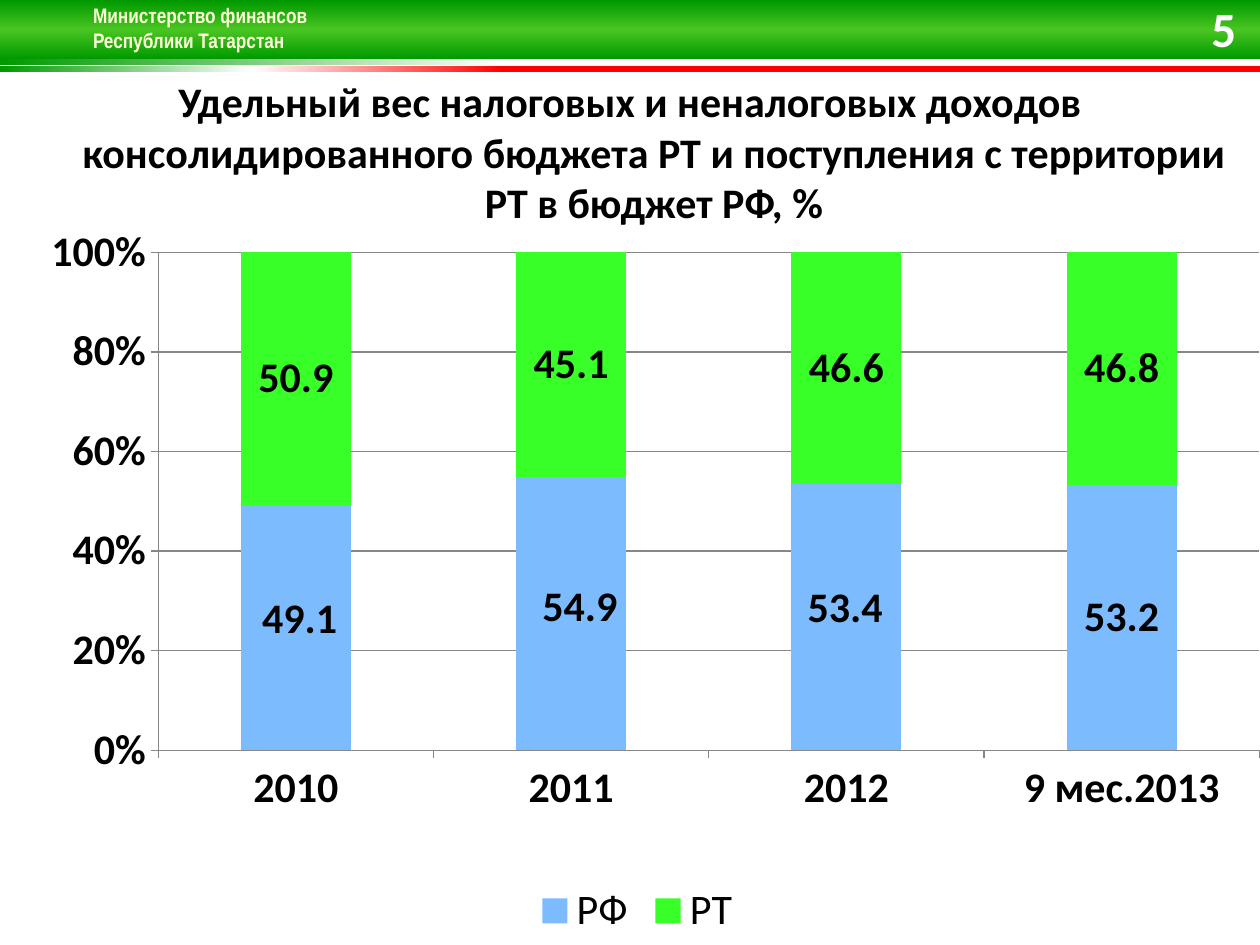
import pptx
import pptx.chart.data
import pptx.dml.color
import pptx.enum.chart
import pptx.enum.shapes
import pptx.enum.text
import pptx.oxml
import pptx.oxml.ns
import pptx.util
from pptx.util import Inches

COLORS = {
    "white": "FFFFFF", "cream": "FFFFD9", "black": "000000",
    "green": "009900", "light_green": "49C522", "red": "FF0000",
    "federal": "7DBBFF", "republic": "39FF29", "axis": "878787",
}
FORMATS = {
    "ministry": {"name": "Arial Narrow", "size": pptx.util.Pt(12), "bold": True},
    "heading": {"name": "Calibri", "size": pptx.util.Pt(24), "bold": True},
    "number": {"name": "Calibri", "size": pptx.util.Pt(28), "bold": True},
    "legend": {"name": "Calibri", "size": pptx.util.Pt(24), "bold": False},
}
NS = pptx.oxml.ns.nsdecls("a", "c")


def rgb(color):
    return pptx.dml.color.RGBColor.from_string(COLORS[color])


def style_font(font, style, color):
    for attribute, value in FORMATS[style].items():
        setattr(font, attribute, value)
    font.color.rgb = rgb(color)


deck = pptx.Presentation()
deck.slide_width, deck.slide_height = Inches(10), Inches(7.5)
slide = deck.slides.add_slide(deck.slide_layouts[5])

# Header bands: top, height, gradient angle, stops in percent
bands = [
    (0.47, 0.05, 180, [(0, "white"), (60, "white"), (100, "green")]),
    (0.52, 0.05, 180, [(60, "red"), (80, "white"), (100, "green")]),
    (0, 0.47, 90, [(0, "green"), (50, "light_green"), (100, "green")]),
]
for top, height, angle, stops in bands:
    band = slide.shapes.add_shape(pptx.enum.shapes.MSO_SHAPE.RECTANGLE,
                                  0, Inches(top), Inches(10), Inches(height))
    band.shadow.inherit = False
    band.line.fill.background()
    stop_xml = "".join(
        f'<a:gs pos="{position * 1000}"><a:srgbClr val="{COLORS[color]}"/></a:gs>'
        for position, color in stops)
    band.fill.background()
    no_fill = band.element.spPr.find(pptx.oxml.ns.qn("a:noFill"))
    no_fill.getparent().replace(no_fill, pptx.oxml.parse_xml(
        f'<a:gradFill {NS} rotWithShape="1"><a:gsLst>{stop_xml}</a:gsLst>'
        f'<a:lin ang="{angle * 60000}" scaled="0"/></a:gradFill>'))

# Ministry name with a soft text shadow
ministry = slide.shapes.add_textbox(Inches(0.64), Inches(-0.03), Inches(1.92), Inches(0.71))
ministry.text_frame.word_wrap = True
ministry.text_frame.text = "Министерство финансов\vРеспублики Татарстан"
for run in ministry.text_frame.paragraphs[0].runs:
    style_font(run.font, "ministry", "cream")
    run.font.fill._xPr.find(pptx.oxml.ns.qn("a:solidFill")).addnext(pptx.oxml.parse_xml(
        f'<a:effectLst {NS}><a:outerShdw blurRad="38100" dist="38100" dir="2700000">'
        '<a:srgbClr val="000000"><a:alpha val="43000"/></a:srgbClr>'
        '</a:outerShdw></a:effectLst>'))

# Heading
heading = slide.shapes.title
heading.left, heading.top = 0, Inches(0.55)
heading.width, heading.height = Inches(10), Inches(0.47)
heading.text_frame.text = (
    "Удельный вес налоговых и неналоговых доходов консолидированного бюджета РТ "
    "и поступления с территории РТ в бюджет РФ, %")
heading.text_frame.word_wrap = True
heading.text_frame.auto_size = pptx.enum.text.MSO_AUTO_SIZE.NONE
heading.text_frame.vertical_anchor = pptx.enum.text.MSO_ANCHOR.TOP
heading_line = heading.text_frame.paragraphs[0]
heading_line.alignment = pptx.enum.text.PP_ALIGN.CENTER
heading_line._p.get_or_add_pPr().set("marL", str(Inches(0.38)))
heading_line._p.get_or_add_pPr().set("indent", str(Inches(-0.38)))
style_font(heading_line.runs[0].font, "heading", "black")

# Revenue shares chart
shares = pptx.chart.data.CategoryChartData(number_format="0.0")
shares.categories = ["2010", "2011", "2012", "9 мес.2013"]
shares.add_series("РФ", [49.1, 54.9, 53.4, 53.2])
shares.add_series("РТ", [50.9, 45.1, 46.6, 46.8])
chart = slide.shapes.add_chart(
    pptx.enum.chart.XL_CHART_TYPE.COLUMN_STACKED_100,
    Inches(0.12), Inches(1.78), Inches(9.88), Inches(5.72), shares).chart
chart.has_title = False
chart.font.name = "Calibri"
chart.font.size = pptx.util.Pt(18)
chart.font.color.rgb = rgb("black")

plot = chart.plots[0]
plot.gap_width, plot.overlap, plot.vary_by_categories = 150, 100, False
plot_area = chart._chartSpace.chart.plotArea
for old_layout in plot_area.findall(pptx.oxml.ns.qn("c:layout")):
    plot_area.remove(old_layout)
plot_area.insert(0, pptx.oxml.parse_xml(
    f'<c:layout {NS}><c:manualLayout><c:layoutTarget val="inner"/>'
    '<c:xMode val="edge"/><c:yMode val="edge"/><c:x val="0.115"/><c:y val="0.039"/>'
    '<c:w val="0.885"/><c:h val="0.691"/></c:manualLayout></c:layout>'))

# Series fills and value labels
for series, color in zip(plot.series, ["federal", "republic"]):
    series.format.fill.solid()
    series.format.fill.fore_color.rgb = rgb(color)
    labels = series.data_labels
    labels.show_value = True
    labels.number_format, labels.number_format_is_linked = "0.0", False
    style_font(labels.font, "heading", "black")

# The first three federal labels are nudged off centre
federal = plot.series[0]
for index, (dx, dy) in enumerate([(0.003, -0.011), (0.007, -0.008), (-0.001, -0.012)]):
    style_font(federal.points[index].data_label.font, "heading", "black")
    label = federal._element.findall(".//" + pptx.oxml.ns.qn("c:dLbl"))[index]
    label.insert(1, pptx.oxml.parse_xml(
        f'<c:layout {NS}><c:manualLayout><c:x val="{dx}"/><c:y val="{dy}"/>'
        '</c:manualLayout></c:layout>'))

# Axes and legend
for axis in (chart.category_axis, chart.value_axis):
    axis.major_tick_mark = pptx.enum.chart.XL_TICK_MARK.OUTSIDE
    axis.format.line.color.rgb = rgb("axis")
    style_font(axis.tick_labels.font, "heading", "black")
chart.value_axis.has_major_gridlines = True
chart.value_axis.major_gridlines.format.line.color.rgb = rgb("axis")
chart.value_axis.tick_labels.number_format = "0%"
chart.value_axis.tick_labels.number_format_is_linked = False
chart.has_legend = True
chart.legend.position = pptx.enum.chart.XL_LEGEND_POSITION.BOTTOM
chart.legend.include_in_layout = False
style_font(chart.legend.font, "legend", "black")

# Slide number
number = slide.shapes.add_textbox(Inches(9.27), Inches(0.05), Inches(0.64), Inches(0.34))
number.text_frame.word_wrap = True
number.text_frame.vertical_anchor = pptx.enum.text.MSO_ANCHOR.MIDDLE
number.text_frame.text = "5"
number_line = number.text_frame.paragraphs[0]
number_line.alignment = pptx.enum.text.PP_ALIGN.RIGHT
style_font(number_line.runs[0].font, "number", "white")

deck.save("out.pptx")
